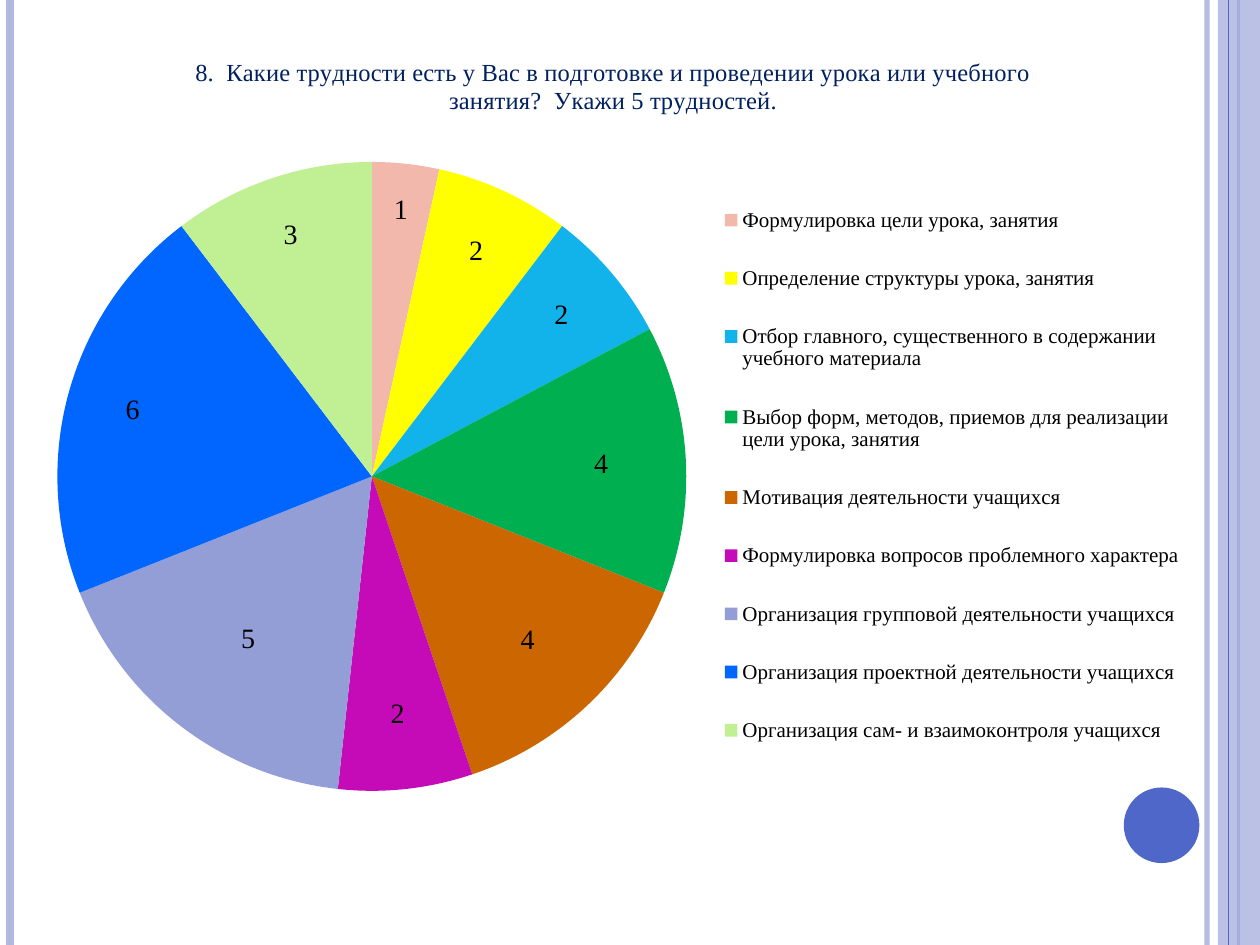
from math import cos, pi, sin
from lxml.etree import SubElement as sub
from pptx import Presentation
from pptx.chart.data import CategoryChartData as Data
from pptx.dml.color import RGBColor
from pptx.enum.chart import XL_CHART_TYPE as Kind, XL_LABEL_POSITION as Spot, XL_LEGEND_POSITION as Side
from pptx.enum.shapes import MSO_CONNECTOR as Link, MSO_SHAPE as Form
from pptx.oxml.ns import qn
from pptx.util import Pt

FACE = "Times New Roman"
BLACK = RGBColor(0, 0, 0)
NAVY = RGBColor(0x00, 0x20, 0x60)
BLUE = RGBColor(0x4E, 0x67, 0xC8)
PALE = RGBColor(0xB2, 0xB8, 0xE0)
PINK = RGBColor(0xF2, 0xB8, 0xAC)
YELLOW = RGBColor(0xFF, 0xFF, 0x00)
SKY = RGBColor(0x12, 0xB2, 0xEB)
GREEN = RGBColor(0x00, 0xB0, 0x50)
BROWN = RGBColor(0xCC, 0x66, 0x00)
PURPLE = RGBColor(0xC5, 0x0B, 0xB8)
LILAC = RGBColor(0x94, 0x9E, 0xD6)
AZURE = RGBColor(0x00, 0x66, 0xFF)
LIME = RGBColor(0xC1, 0xF0, 0x94)

TITLE = "8.  Какие трудности есть у Вас в подготовке и проведении урока или учебного занятия?  Укажи 5 трудностей."
SLICES = [
    ("Формулировка цели урока, занятия", 1, PINK, 0.85),
    ("Определение структуры урока, занятия", 2, YELLOW, 0.79),
    ("Отбор главного, существенного в содержании учебного материала", 2, SKY, 0.79),
    ("Выбор форм, методов, приемов для реализации цели урока, занятия", 4, GREEN, 0.73),
    ("Мотивация деятельности учащихся", 4, BROWN, 0.72),
    ("Формулировка вопросов проблемного характера", 2, PURPLE, 0.76),
    ("Организация групповой деятельности учащихся", 5, LILAC, 0.65),
    ("Организация проектной деятельности учащихся", 6, AZURE, 0.79),
    ("Организация сам- и взаимоконтроля учащихся", 3, LIME, 0.81),
]
BARS = [(689.8, PALE, 3, 93), (5.8, PALE, 4.5, 100), (707.8, BLUE, 1.5, 100)]
EDGE = (702, BLUE, 0.75, 100)
WIDE, HIGH = 720, 540
LEFT, TOP, SPAN, RISE = 20.2, 15.1, 663.1, 493.2
RADIUS = 179.7


def style(font, size, color=BLACK):
    font.name, font.size, font.bold = FACE, Pt(size), False
    font.color.rgb = color


def write(frame, text, size=14, color=BLACK):
    run = frame.paragraphs[0].add_run()
    run.text = text
    style(run.font, size, color)


def fade(props, alpha):
    if alpha < 100:
        tint = next(props.iter(qn("a:srgbClr")))
        sub(tint, qn("a:alpha"), val=str(alpha * 1000))


def bar(shapes, x, color, width, alpha):
    line = shapes.add_connector(Link.STRAIGHT, Pt(x), 0, Pt(x), Pt(HIGH))
    line.line.color.rgb = color
    line.line.width = Pt(width)
    props = line._element.spPr
    fade(props, alpha)
    sub(props, qn("a:effectLst"))


def block(shapes, form, x, y, w, h, color, alpha=100):
    shape = shapes.add_shape(form, Pt(x), Pt(y), Pt(w), Pt(h))
    shape.shadow.inherit = False
    shape.fill.solid()
    shape.fill.fore_color.rgb = color
    shape.line.fill.background()
    fade(shape._element.spPr, alpha)


def place(node, after, inner=False, edge=True, **box):
    for old in node.findall(qn("c:layout")):
        node.remove(old)
    outer = sub(node, qn("c:layout"))
    if after is None:
        node.insert(0, outer)
    else:
        node.find(qn(after)).addnext(outer)
    man = sub(outer, qn("c:manualLayout"))
    if inner:
        sub(man, qn("c:layoutTarget"), val="inner")
    if edge:
        for key in "xy":
            sub(man, qn(f"c:{key}Mode"), val="edge")
    for key, val in box.items():
        sub(man, qn(f"c:{key}"), val=str(round(val, 4)))


def pie(shapes):
    data = Data()
    data.categories = [row[0] for row in SLICES]
    data.add_series("Series 1", [row[1] for row in SLICES])
    chart = shapes.add_chart(Kind.PIE, Pt(LEFT), Pt(TOP), Pt(SPAN), Pt(RISE), data).chart
    style(chart.font, 10)
    chart.has_title = True
    write(chart.chart_title.text_frame, TITLE, size=14, color=NAVY)
    chart.chart_title.include_in_layout = False
    chart.has_legend = True
    key = chart.legend
    key.position = Side.RIGHT
    key.include_in_layout = False
    style(key.font, 12)
    plot = chart.plots[0]
    plot.vary_by_categories = True
    series = plot.series[0]
    total, done = sum(row[1] for row in SLICES), 0
    for i, (name, val, color, reach) in enumerate(SLICES):
        point = series.points[i]
        point.format.fill.solid()
        point.format.fill.fore_color.rgb = color
        point.format.line.fill.background()
        style(point.data_label.font, 16)
        point.data_label.position = Spot.CENTER
    labels = series._element.iter(qn("c:dLbl"))
    for label, (name, val, color, reach) in zip(labels, SLICES):
        turn = 2 * pi * (done + val / 2) / total
        push = (reach - 0.5) * RADIUS
        place(label, "c:idx", edge=False, x=push * sin(turn) / SPAN, y=-push * cos(turn) / RISE)
        done += val
    root = chart._chartSpace.chart
    place(root.plotArea, None, inner=True, x=0.019, y=0.157, w=0.542, h=0.729)
    place(root.find(qn("c:title")), "c:tx", x=0.134, y=0.03)
    place(root.find(qn("c:legend")), "c:legendPos", x=0.59, y=0.17, w=0.4, h=0.7)


def main():
    deck = Presentation()
    deck.slide_width, deck.slide_height = Pt(WIDE), Pt(HIGH)
    shapes = deck.slides.add_slide(deck.slide_layouts[6]).shapes
    for row in BARS:
        bar(shapes, *row)
    block(shapes, Form.RECTANGLE, 696, 0, 24, HIGH, PALE, alpha=87)
    bar(shapes, *EDGE)
    block(shapes, Form.OVAL, 642.2, 450, 43.2, 43.2, BLUE)
    pie(shapes)
    deck.save("out.pptx")


if __name__ == "__main__":
    main()
